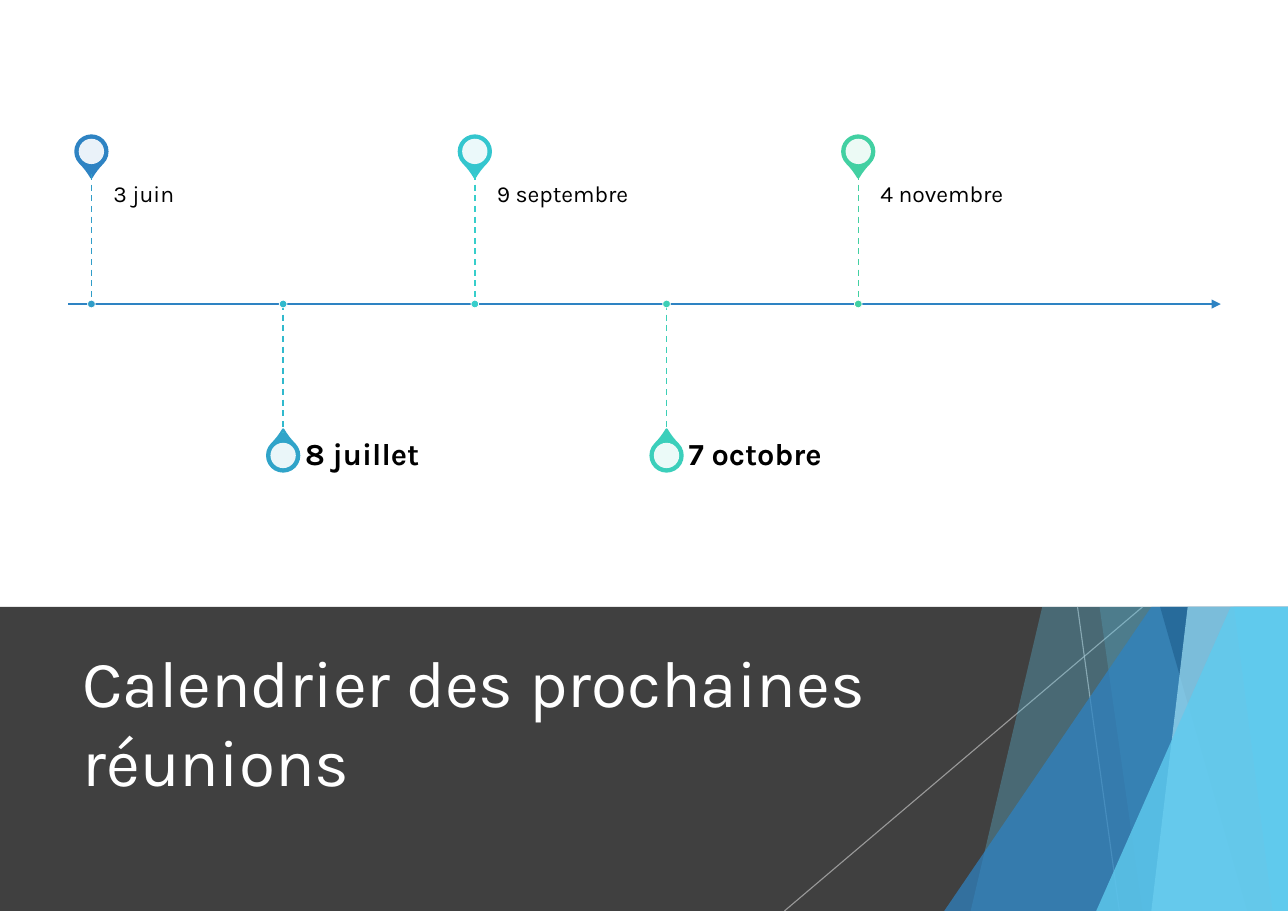
from dataclasses import dataclass

from lxml.etree import SubElement
from pptx import Presentation
from pptx.dml.color import RGBColor
from pptx.enum.dml import MSO_LINE_DASH_STYLE as Dash
from pptx.enum.shapes import MSO_CONNECTOR_TYPE as Connector
from pptx.enum.shapes import MSO_SHAPE as Preset
from pptx.enum.text import MSO_ANCHOR as Anchor
from pptx.enum.text import MSO_AUTO_SIZE as AutoSize
from pptx.enum.text import PP_ALIGN as Align
from pptx.oxml.ns import qn
from pptx.util import Inches, Pt

COLORS = {
    "band": "404040", "white": "FFFFFF", "black": "000000", "hairline": "BFBFBF",
    "sky": "5FCBEF", "pale": "9FE0F5", "blue": "2E83C3", "navy": "226292",
    "pin1": "2E83C3", "pin2": "30A4C9", "pin3": "34C6CE", "pin4": "3BCFBB", "pin5": "42D0A2",
    "stem1": "309DC8", "stem2": "31B9CD", "stem3": "37CECB", "stem4": "3CCFB6", "stem5": "42D0A2",
}
WIDTH, HEIGHT = 11.69, 8.27
BAND_TOP = 5.51
AXIS_Y = 2.76
FIRST_X, STEP = 0.83, 1.74
PIN, HOLE, DOT = 0.29, 0.23, 0.07


@dataclass(frozen=True)
class Facet:
    top_x: float
    bottom_x: float
    color: str
    opacity: int


@dataclass(frozen=True)
class Side:
    pin_y: float
    stem_end: float
    rotation: int
    label_top: float
    label_height: float
    frame: dict
    font: dict


FACETS = [
    Facet(9.46, 8.81, "sky", 30),
    Facet(9.98, 10.37, "sky", 20),
    Facet(10.45, 8.57, "blue", 72),
    Facet(10.53, 11.32, "navy", 70),
    Facet(10.78, 10.45, "pale", 70),
    Facet(11.2, 11.55, "sky", 65),
    Facet(11.17, 9.95, "sky", 80),
]
ABOVE = Side(1.375, 1.58, 135, 1.58, 1.17,
             {"vertical_anchor": Anchor.TOP, "margin_left": 0, "margin_top": Inches(0.1),
              "margin_right": Inches(0.1), "margin_bottom": Inches(0.16)},
             {"size": Pt(15), "bold": False})
BELOW = Side(4.135, 3.93, 315, 3.93, 0.41,
             {"vertical_anchor": Anchor.MIDDLE, "margin_left": 0, "margin_top": 0,
              "margin_right": Inches(0.14), "margin_bottom": 0},
             {"size": Pt(20), "bold": True})
MEETINGS = ["3 juin", "8 juillet", "9 septembre", "7 octobre", "4 novembre"]


def rgb(color: str) -> RGBColor:
    return RGBColor.from_string(COLORS[color])


def apply(target, formats: dict) -> None:
    for name, value in formats.items():
        setattr(target, name, value)


def set_opacity(element, percent: int) -> None:
    if percent < 100:
        color = next(element.iter(qn("a:srgbClr")))
        SubElement(color, qn("a:alpha"), val=str(percent * 1000))


def paint(shape, color: str, opacity: int = 100, outline: str = "", weight: float = 0) -> None:
    shape.shadow.inherit = False
    shape.fill.solid()
    shape.fill.fore_color.rgb = rgb(color)
    set_opacity(shape.element.spPr, opacity)
    if outline:
        shape.line.color.rgb = rgb(outline)
        shape.line.width = Pt(weight)
    else:
        shape.line.fill.background()


def add_facet(slide, facet: Facet) -> None:
    corners = [(facet.top_x, BAND_TOP), (WIDTH, BAND_TOP), (WIDTH, HEIGHT), (facet.bottom_x, HEIGHT)]
    points = [(Inches(x), Inches(y)) for x, y in corners]
    builder = slide.shapes.build_freeform(*points[0])
    builder.add_line_segments(points[1:], close=True)
    paint(builder.convert_to_shape(), facet.color, facet.opacity)


def add_line(slide, start: tuple, end: tuple, color: str, weight: float,
             opacity: int = 100, dash: Dash = Dash.SOLID):
    line = slide.shapes.add_connector(Connector.STRAIGHT, *map(Inches, start + end))
    line.line.color.rgb = rgb(color)
    apply(line.line, {"width": Pt(weight), "dash_style": dash})
    properties = line.element.spPr
    set_opacity(properties, opacity)
    SubElement(properties, qn("a:effectLst"))
    return line


def add_centered(slide, preset: Preset, x: float, y: float, size: float):
    return slide.shapes.add_shape(
        preset, Inches(x - size / 2), Inches(y - size / 2), Inches(size), Inches(size))


def add_label(slide, text: str, x: float, side: Side) -> None:
    label = slide.shapes.add_textbox(
        Inches(x), Inches(side.label_top), Inches(2.9), Inches(side.label_height))
    frame = label.text_frame
    apply(frame, {"word_wrap": True, **side.frame})
    paragraph = frame.paragraphs[0]
    apply(paragraph, {"text": text, "line_spacing": 0.9})
    apply(paragraph.font, {"name": "Karla", **side.font})
    paragraph.font.color.rgb = rgb("black")


def add_meeting(slide, index: int, text: str) -> None:
    side = BELOW if index % 2 else ABOVE
    x = FIRST_X + index * STEP
    pin_color, stem_color = f"pin{index + 1}", f"stem{index + 1}"
    pin = add_centered(slide, Preset.TEAR, x, side.pin_y, PIN)
    pin.adjustments[0] = 1.15
    pin.rotation = side.rotation
    paint(pin, pin_color, outline=pin_color, weight=1.5)
    paint(add_centered(slide, Preset.OVAL, x, side.pin_y, HOLE), "white", 90)
    add_label(slide, text, x + 0.2, side)
    ends = sorted([side.stem_end, AXIS_Y])
    add_line(slide, (x, ends[0]), (x, ends[1]), stem_color, 1, dash=Dash.DASH)
    paint(add_centered(slide, Preset.OVAL, x, AXIS_Y, DOT), stem_color, outline="white", weight=0.5)


def format_title(slide) -> None:
    title = slide.shapes.title
    apply(title, {"left": Inches(0.65), "top": Inches(5.75),
                  "width": Inches(8.24), "height": Inches(1.59)})
    apply(title.text_frame, {"text": "Calendrier des prochaines réunions", "word_wrap": True,
                             "auto_size": AutoSize.NONE, "vertical_anchor": Anchor.MIDDLE})
    paragraph = title.text_frame.paragraphs[0]
    paragraph.alignment = Align.LEFT
    apply(paragraph.font, {"name": "Karla", "size": Pt(43)})
    paragraph.font.color.rgb = rgb("white")
    slide.shapes.element.append(title.element)


def main() -> None:
    presentation = Presentation()
    apply(presentation, {"slide_width": Inches(WIDTH), "slide_height": Inches(HEIGHT)})
    slide = presentation.slides.add_slide(presentation.slide_layouts[5])

    band = slide.shapes.add_shape(
        Preset.RECTANGLE, 0, Inches(BAND_TOP), Inches(WIDTH), Inches(HEIGHT - BAND_TOP))
    paint(band, "band")
    for top_x, bottom_x in [(9.78, 10.16), (10.37, 7.12)]:
        add_line(slide, (top_x, BAND_TOP), (bottom_x, HEIGHT), "hairline", 0.75, 70)
    for facet in FACETS:
        add_facet(slide, facet)
    format_title(slide)

    axis = add_line(slide, (0.62, AXIS_Y), (11.08, AXIS_Y), "blue", 1.5)
    SubElement(axis.line._get_or_add_ln(), qn("a:tailEnd"), type="triangle")
    for index, text in enumerate(MEETINGS):
        add_meeting(slide, index, text)

    presentation.save("out.pptx")


if __name__ == "__main__":
    main()
